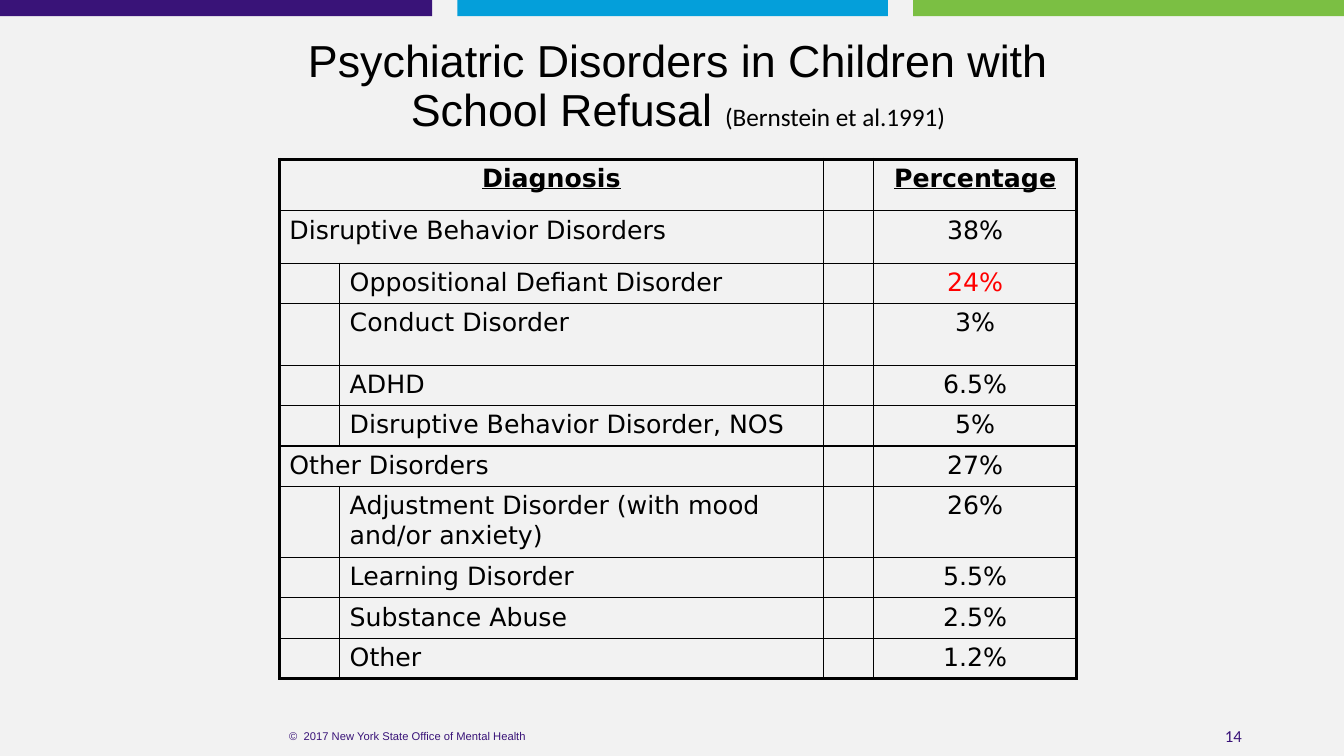
from dataclasses import dataclass

from lxml.etree import SubElement
from pptx import Presentation
from pptx.dml.color import RGBColor
from pptx.enum.shapes import MSO_SHAPE as Shape
from pptx.enum.text import MSO_ANCHOR as Anchor, PP_ALIGN as Align
from pptx.oxml.ns import qn
from pptx.util import Cm, Pt


@dataclass(frozen=True)
class Theme:
    background: str = "F2F2F2"
    purple: str = "391378"
    blue: str = "049FDA"
    green: str = "7BBF43"
    black: str = "000000"
    red: str = "FF0000"
    heading_font: str = "Arial"
    body_font: str = "Calibri"
    table_font: str = "DejaVu Sans"
    title_size: float = 32
    table_size: float = 18
    number_size: float = 12
    footer_size: float = 8
    thin: float = 1
    thick: float = 2.25


THEME = Theme()

COLUMN_WIDTHS = (1.52, 12.19, 1.27, 5.11)
# Diagnosis, percentage, row height in cm, whether it is a subgroup
ROWS = (
    ("Diagnosis", "Percentage", 1.3, False),
    ("Disruptive Behavior Disorders", "38%", 1.32, False),
    ("Oppositional Defiant Disorder", "24%", 1.02, True),
    ("Conduct Disorder", "3%", 1.55, True),
    ("ADHD", "6.5%", 1.02, True),
    ("Disruptive Behavior Disorder, NOS", "5%", 1.02, True),
    ("Other Disorders", "27%", 1.02, False),
    ("Adjustment Disorder (with mood and/or anxiety)", "26%", 1.78, True),
    ("Learning Disorder", "5.5%", 1.02, True),
    ("Substance Abuse", "2.5%", 1.02, True),
    ("Other", "1.2%", 1.02, True),
)
HIGHLIGHT = "24%"


def format_run(run, font, size, color):
    run.font.name = font
    run.font.size = Pt(size)
    run.font.color.rgb = RGBColor.from_string(color)


def add_bar(slide, left, width, color):
    bar = slide.shapes.add_shape(Shape.RECTANGLE, Cm(left), 0, Cm(width), Cm(0.41))
    bar.shadow.inherit = False
    bar.fill.solid()
    bar.fill.fore_color.rgb = RGBColor.from_string(color)
    bar.line.fill.background()


def add_text(slide, box, align, *runs):
    """Add one paragraph; each run is (text, font, size, color)."""
    text_box = slide.shapes.add_textbox(*map(Cm, box))
    text_frame = text_box.text_frame
    text_frame.word_wrap = True
    text_frame.vertical_anchor = Anchor.MIDDLE
    paragraph = text_frame.paragraphs[0]
    paragraph.alignment = align
    for text, *style in runs:
        run = paragraph.add_run()
        run.text = text
        format_run(run, *style)
    return paragraph


def set_borders(cell, thick_sides):
    properties = cell._tc.get_or_add_tcPr()
    for side in "LRTB":
        width = THEME.thick if side in thick_sides else THEME.thin
        line = SubElement(properties, qn(f"a:ln{side}"), w=str(Pt(width)))
        fill = SubElement(line, qn("a:solidFill"))
        SubElement(fill, qn("a:srgbClr"), val=THEME.black)


def fill_cell(cell, text, align, header):
    cell.text_frame.text = text
    paragraph = cell.text_frame.paragraphs[0]
    paragraph.alignment = align
    color = THEME.red if text == HIGHLIGHT else THEME.black
    for run in paragraph.runs:
        format_run(run, THEME.table_font, THEME.table_size, color)
        run.font.bold = run.font.underline = header


def add_diagnosis_table(slide, left, top):
    heights = [row[2] for row in ROWS]
    frame = slide.shapes.add_table(
        len(ROWS), len(COLUMN_WIDTHS), Cm(left), Cm(top),
        Cm(sum(COLUMN_WIDTHS)), Cm(sum(heights)))
    table = frame.table
    table.first_row = table.horz_banding = False
    for column, width in zip(table.columns, COLUMN_WIDTHS):
        column.width = Cm(width)
    last_row, last_column = len(ROWS) - 1, len(COLUMN_WIDTHS) - 1

    for i, (diagnosis, percentage, height, subgroup) in enumerate(ROWS):
        table.rows[i].height = Cm(height)
        # Outer edges are thick, inner ones thin
        for j in range(len(COLUMN_WIDTHS)):
            cell = table.cell(i, j)
            edges = {"L": j == 0, "R": j == last_column, "T": i == 0, "B": i == last_row}
            set_borders(cell, [side for side, outer in edges.items() if outer])
            cell.fill.background()
        # Group names span the indent column
        if not subgroup:
            table.cell(i, 0).merge(table.cell(i, 1))
        header = i == 0
        fill_cell(table.cell(i, int(subgroup)), diagnosis,
                  Align.CENTER if header else Align.LEFT, header)
        fill_cell(table.cell(i, last_column), percentage, Align.CENTER, header)
        # Empty cells must not stretch their row
        for cell in table.rows[i].cells:
            if not cell.text_frame.text:
                cell.margin_top = cell.margin_bottom = 0


def main():
    presentation = Presentation()
    presentation.slide_width, presentation.slide_height = Cm(33.87), Cm(19.05)
    slide = presentation.slides.add_slide(presentation.slide_layouts[6])

    # Background and top bars
    slide.background.fill.solid()
    slide.background.fill.fore_color.rgb = RGBColor.from_string(THEME.background)
    add_bar(slide, 0, 10.89, THEME.purple)
    add_bar(slide, 11.53, 10.85, THEME.blue)
    add_bar(slide, 23.01, 10.86, THEME.green)

    # Title
    title = add_text(
        slide, (6.93, 0.41, 20.32, 3.6), Align.CENTER,
        ("Psychiatric Disorders in Children with School Refusal ",
         THEME.heading_font, THEME.title_size, THEME.black),
        ("(Bernstein et al.1991)", THEME.body_font, THEME.table_size, THEME.black))
    title.line_spacing = 0.9

    # Table
    add_diagnosis_table(slide, 7.04, 4.01)

    # Footer
    add_text(slide, (23.93, 18.03, 7.62, 1.02), Align.RIGHT,
             ("14", THEME.body_font, THEME.number_size, THEME.purple))
    add_text(slide, (4.6, 18.03, 11.35, 1.02), Align.CENTER,
             ("©  2017 New York State Office of Mental Health",
              THEME.heading_font, THEME.footer_size, THEME.purple))

    presentation.save("out.pptx")


if __name__ == "__main__":
    main()
